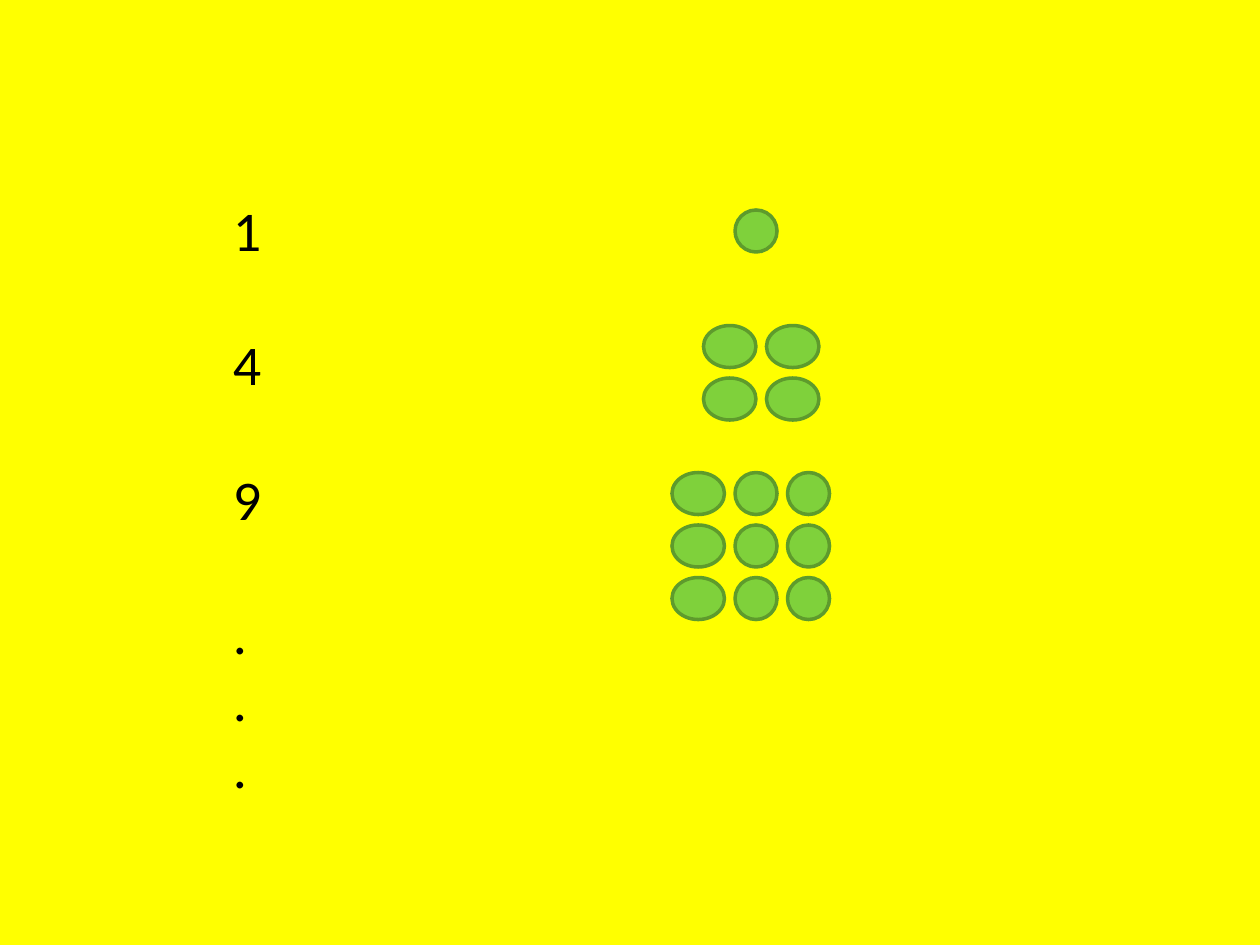
from pptx import Presentation
from pptx import util as u
from pptx.dml.color import RGBColor
from pptx.enum import shapes, text

PX = 7620  # EMU per px, 120 px to the inch
DOT_HEIGHT = 40
GAP = 10
NARROW, WIDE = 40, 50


def px(length):
    return u.Emu(length * PX)


def color(hex_string):
    return RGBColor.from_string(hex_string)


def add_dot(slide, left, top, width):
    shape = slide.shapes.add_shape(
        shapes.MSO_SHAPE.OVAL, px(left), px(top), px(width), px(DOT_HEIGHT))
    shape.shadow.inherit = False
    shape.fill.solid()
    shape.fill.fore_color.rgb = color("7FD13B")
    shape.line.color.rgb = color("5E9B2C")
    shape.line.width = u.Pt(2)


def add_square_number(slide, left, top, column_widths):
    """Draw as many rows of dots as there are columns."""
    for row in range(len(column_widths)):
        x = left
        for width in column_widths:
            add_dot(slide, x, top + row * (DOT_HEIGHT + GAP), width)
            x += width + GAP


def add_number_list(slide, left, top, width, height, lines):
    """Each line is its text and the space before it in points."""
    frame = slide.shapes.add_textbox(
        px(left), px(top), px(width), px(height)).text_frame
    frame.word_wrap = False
    frame.auto_size = text.MSO_AUTO_SIZE.SHAPE_TO_FIT_TEXT
    frame.text = "\n".join(line for line, _ in lines)
    for paragraph, (_, space) in zip(frame.paragraphs, lines):
        paragraph.space_before = u.Pt(space)
        font = paragraph.runs[0].font
        font.name = "Calibri"
        font.size = u.Pt(32)
        font.color.rgb = color("000000")


def main():
    presentation = Presentation()
    presentation.slide_width = px(1200)
    presentation.slide_height = px(900)
    slide = presentation.slides.add_slide(presentation.slide_layouts[6])
    slide.background.fill.solid()
    slide.background.fill.fore_color.rgb = color("FFFF00")

    # Square numbers, one line apart, then the continuation dots
    line_gap = 38.4
    add_number_list(slide, 210, 180, 52, 703, [
        ("1", 0), ("4", line_gap), ("9", line_gap),
        (".", line_gap), (".", 0), (".", 0)])

    # Dot patterns for 1, 4 and 9
    add_square_number(slide, 700, 200, [NARROW])
    add_square_number(slide, 670, 310, [WIDE, WIDE])
    add_square_number(slide, 640, 450, [WIDE, NARROW, NARROW])

    presentation.save("out.pptx")


if __name__ == "__main__":
    main()
